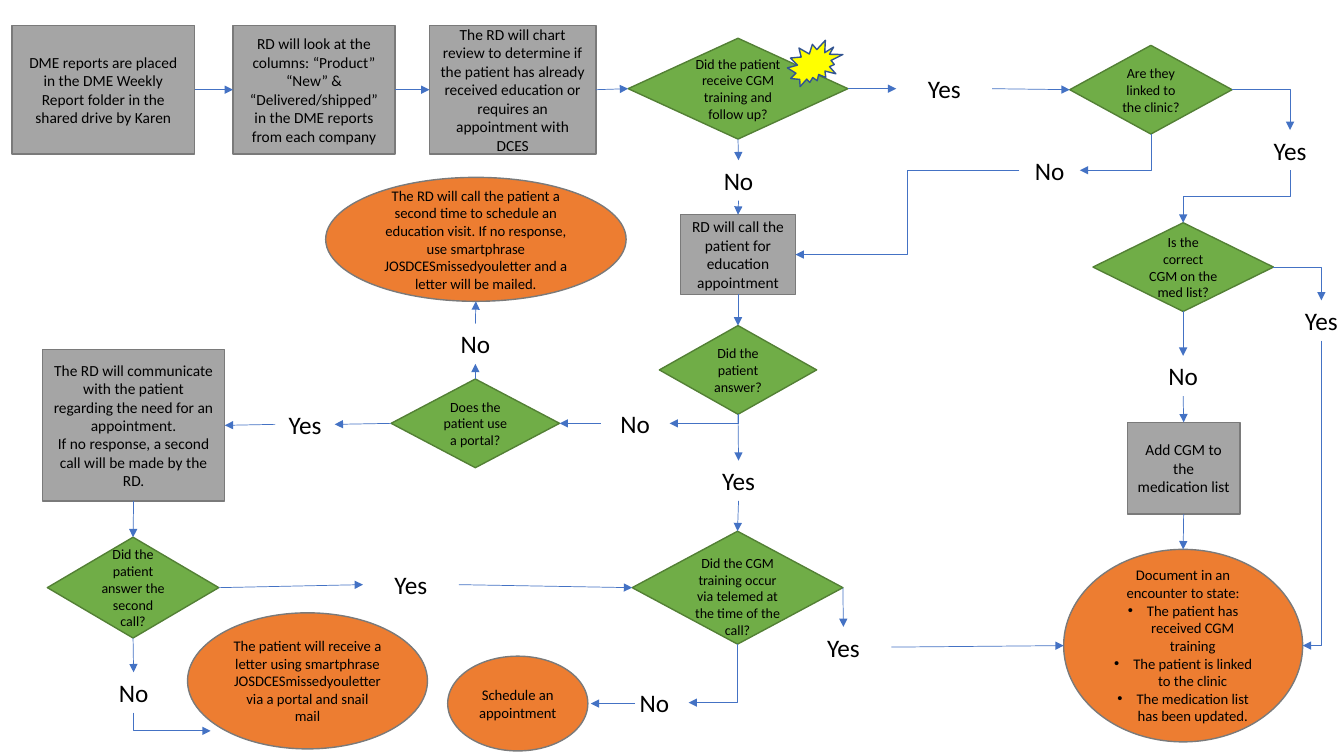
"""Build the flowchart slide for following up on CGM equipment reports."""
from lxml import etree
from pptx import Presentation
from pptx.dml.color import RGBColor
from pptx.enum.shapes import MSO_CONNECTOR as LINK, MSO_SHAPE as SHAPE
from pptx.enum.text import MSO_ANCHOR as ANCHOR, PP_ALIGN as ALIGN
from pptx.oxml.ns import qn
from pptx.util import Inches, Pt

TOP, LEFT, BOTTOM, RIGHT = range(4)
FONT, BLACK, ARROW = "Calibri", "000000", "4472C4"

STYLES = {
    "step": (SHAPE.RECTANGLE, "A5A5A5", "7A7A7A", 11),
    "question": (SHAPE.DIAMOND, "70AD47", "538035", 10),
    "outcome": (SHAPE.OVAL, "ED7D31", "7A7A7A", 10.5),
    "flag": (SHAPE.EXPLOSION2, "FFFF00", "325491", 10),
}

NODES = {
    "reports": ("step", 0.12, 0.25, 1.81, 1.28, [
        "DME reports are placed in the DME Weekly Report folder in the shared drive by Karen"]),
    "columns": ("step", 2.31, 0.25, 1.61, 1.28, [
        "RD will look at the columns: “Product” “New” & “Delivered/shipped” in the DME reports "
        "from each company"]),
    "review": ("step", 4.26, 0.25, 1.65, 1.28, [
        "The RD will chart review to determine if the patient has already received education or "
        "requires an appointment with DCES"]),
    "call": ("step", 6.75, 2.13, 1.14, 0.79, ["RD will call the patient for education appointment"]),
    "message": ("step", 0.42, 3.47, 1.81, 1.5, [
        "The RD will communicate with the patient regarding the need for an appointment.",
        "If no response, a second call will be made by the RD."]),
    "add": ("step", 11.18, 4.19, 1.12, 0.91, ["Add CGM to the medication list"]),
    "trained": ("question", 6.23, 0.38, 2.18, 1, [
        "Did the patient receive CGM training and follow up?"]),
    "linked": ("question", 10.61, 0.45, 1.61, 0.88, ["Are they linked to the clinic?"]),
    "listed": ("question", 10.84, 2.21, 1.79, 0.88, ["Is the correct CGM on the med list?"]),
    "answered": ("question", 6.54, 3.23, 1.56, 0.88, ["Did the patient answer?"]),
    "portal": ("question", 3.88, 3.76, 1.67, 0.88, ["Does the patient use a portal?"]),
    "second": ("question", 0.47, 5.33, 1.7, 1, ["Did the patient answer the second call?"]),
    "telemed": ("question", 6.27, 5.27, 2.09, 1.12, [
        "Did the CGM training occur via telemed at the time of the call?"]),
    "retry": ("outcome", 3.23, 1.76, 2.98, 1.23, [
        "The RD will call the patient a second time to schedule an education visit. If no response, "
        "use smartphrase JOSDCESmissedyouletter and a letter will be mailed."]),
    "letter": ("outcome", 1.86, 6.08, 2.38, 1.35, [
        "The patient will receive a letter using smartphrase JOSDCESmissedyouletter via a portal "
        "and snail mail"]),
    "schedule": ("outcome", 4.44, 6.51, 1.39, 0.94, ["Schedule an appointment"]),
    "document": ("outcome", 10.55, 5.45, 2.37, 1.91, [
        "Document in an encounter to state:", "• The patient has received CGM training",
        "• The patient is linked to the clinic", "• The medication list has been updated."]),
    "star": ("flag", 7.81, 0.4, 0.55, 0.46, []),
}
TOP_MARGINS = {"telemed": 0.22}

LABELS = {
    "trained yes": (8.89, 0.68, 0.95), "trained no": (6.85, 1.59, 0.95),
    "linked yes": (12.32, 1.29, 0.95), "linked no": (10.11, 1.49, 0.6),
    "listed yes": (12.63, 2.98, 0.95), "listed no": (11.26, 3.53, 0.95),
    "answered yes": (6.85, 4.57, 0.95), "answered no": (5.96, 4, 0.68),
    "portal yes": (2.73, 4.01, 0.59), "portal no": (4.24, 3.21, 0.95),
    "second yes": (3.6, 5.6, 0.95), "second no": (1.04, 6.67, 0.57),
    "telemed yes": (7.89, 6.22, 0.95), "telemed no": (6.15, 6.77, 0.68),
}
LABEL_HEIGHT = 0.4

STRAIGHT = [
    ("reports", RIGHT, "columns", LEFT), ("columns", RIGHT, "review", LEFT),
    ("review", RIGHT, "trained", LEFT), ("trained", RIGHT, "trained yes", LEFT),
    ("trained yes", RIGHT, "linked", LEFT), ("trained", BOTTOM, "trained no", TOP),
    ("trained no", BOTTOM, "call", TOP), ("call", BOTTOM, "answered", TOP),
    ("answered", BOTTOM, "answered yes", TOP), ("answered yes", BOTTOM, "telemed", TOP),
    ("answered no", LEFT, "portal", RIGHT), ("portal", TOP, "portal no", BOTTOM),
    ("portal no", TOP, "retry", BOTTOM), ("portal", LEFT, "portal yes", RIGHT),
    ("portal yes", LEFT, "message", RIGHT), ("message", BOTTOM, "second", TOP),
    ("second", RIGHT, "second yes", LEFT), ("second yes", RIGHT, "telemed", LEFT),
    ("second", BOTTOM, "second no", TOP), ("telemed", RIGHT, "telemed yes", TOP),
    ("telemed yes", RIGHT, "document", LEFT), ("listed", BOTTOM, "listed no", TOP),
    ("listed no", BOTTOM, "add", TOP), ("add", BOTTOM, "document", TOP),
]
FREE_STRAIGHT = [((6.3, 6.98), (5.86, 6.98))]
LETTER_EDGE = (2.09, 7.25)
BENT = [
    ("linked", RIGHT, "linked yes", TOP), ("linked", BOTTOM, "linked no", RIGHT),
    ("linked yes", BOTTOM, "listed", TOP), ("linked no", LEFT, "call", RIGHT),
    ("listed", RIGHT, "listed yes", TOP), ("listed yes", BOTTOM, "document", RIGHT),
    ("answered", BOTTOM, "answered no", RIGHT), ("telemed", BOTTOM, "telemed no", RIGHT),
    ("second no", BOTTOM, LETTER_EDGE, LEFT),
]


def color(value):
    return RGBColor.from_string(value)


def write(frame, lines, size):
    frame.word_wrap = True
    for index, line in enumerate(lines):
        para = frame.paragraphs[0] if index == 0 else frame.add_paragraph()
        para.text = line.removeprefix("• ")
        para.alignment = ALIGN.CENTER
        para.font.name, para.font.size = FONT, Pt(size)
        para.font.color.rgb = color(BLACK)
        if line.startswith("• "):
            props = para._p.get_or_add_pPr()
            props.set("marL", str(Inches(0.19)))
            props.set("indent", str(-Inches(0.19)))
            bullet = etree.Element(qn("a:buChar"), char="•")
            props.insert(0, bullet)
            bullet.addprevious(etree.Element(qn("a:buFont"), typeface="Arial"))


def add_node(page, name):
    kind, left, top, width, height, lines = NODES[name]
    preset, fill, edge, size = STYLES[kind]
    box = page.shapes.add_shape(preset, *map(Inches, (left, top, width, height)))
    box.shadow.inherit = False
    box.fill.solid()
    box.fill.fore_color.rgb = color(fill)
    box.line.color.rgb = color(edge)
    box.line.width = Pt(1)
    box.text_frame.vertical_anchor = ANCHOR.MIDDLE
    box.text_frame.margin_top = Inches(TOP_MARGINS.get(name, 0.05))
    write(box.text_frame, lines, size)
    return box


def add_label(page, name):
    left, top, width = LABELS[name]
    box = page.shapes.add_textbox(*map(Inches, (left, top, width, LABEL_HEIGHT)))
    write(box.text_frame, [name.split()[-1].capitalize()], 18)
    return box


def side_point(box, side):
    across = {LEFT: 0, RIGHT: 1}.get(side, 0.5)
    down = {TOP: 0, BOTTOM: 1}.get(side, 0.5)
    return int(box.left + across * box.width), int(box.top + down * box.height)


def add_arrow(page, kind, start, end):
    arrow = page.shapes.add_connector(kind, *map(int, (*start, *end)))
    arrow.line.color.rgb = color(ARROW)
    arrow.line.width = Pt(0.5)
    etree.SubElement(arrow.line._get_or_add_ln(), qn("a:tailEnd"), type="triangle")
    etree.SubElement(arrow._element.spPr, qn("a:effectLst"))
    return arrow


def add_bent(page, start, leaving, end, entering):
    vertical = leaving in (TOP, BOTTOM)
    one_corner = vertical != (entering in (TOP, BOTTOM))
    if vertical:
        middle_x, middle_y = (start[0] + end[0]) / 2, (start[1] + end[1]) / 2
        half_x, half_y = (end[0] - start[0]) / 2, (end[1] - start[1]) / 2
        start = middle_x - half_y, middle_y + half_x
        end = middle_x + half_y, middle_y - half_x
    arrow = add_arrow(page, LINK.ELBOW, start, end)
    if vertical:
        arrow._element.spPr.find(qn("a:xfrm")).set("rot", str(90 * 60000))
    if one_corner:
        arrow._element.spPr.find(qn("a:prstGeom")).set("prst", "bentConnector2")


def main():
    deck = Presentation()
    deck.slide_width, deck.slide_height = Inches(13.33), Inches(7.5)
    page = deck.slides.add_slide(deck.slide_layouts[6])
    boxes = {name: add_node(page, name) for name in NODES}
    boxes.update({name: add_label(page, name) for name in LABELS})
    ovals = {name for name, node in NODES.items() if node[0] == "outcome"}
    for source, leaving, target, entering in STRAIGHT:
        arrow = add_arrow(page, LINK.STRAIGHT, side_point(boxes[source], leaving),
                          side_point(boxes[target], entering))
        arrow.begin_connect(boxes[source], leaving)
        if target not in ovals:
            arrow.end_connect(boxes[target], entering)
    for start, end in FREE_STRAIGHT:
        add_arrow(page, LINK.STRAIGHT, map(Inches, start), map(Inches, end))
    for source, leaving, target, entering in BENT:
        end = (side_point(boxes[target], entering) if target in boxes
               else tuple(map(Inches, target)))
        add_bent(page, side_point(boxes[source], leaving), leaving, end, entering)
    deck.save("out.pptx")


if __name__ == "__main__":
    main()
